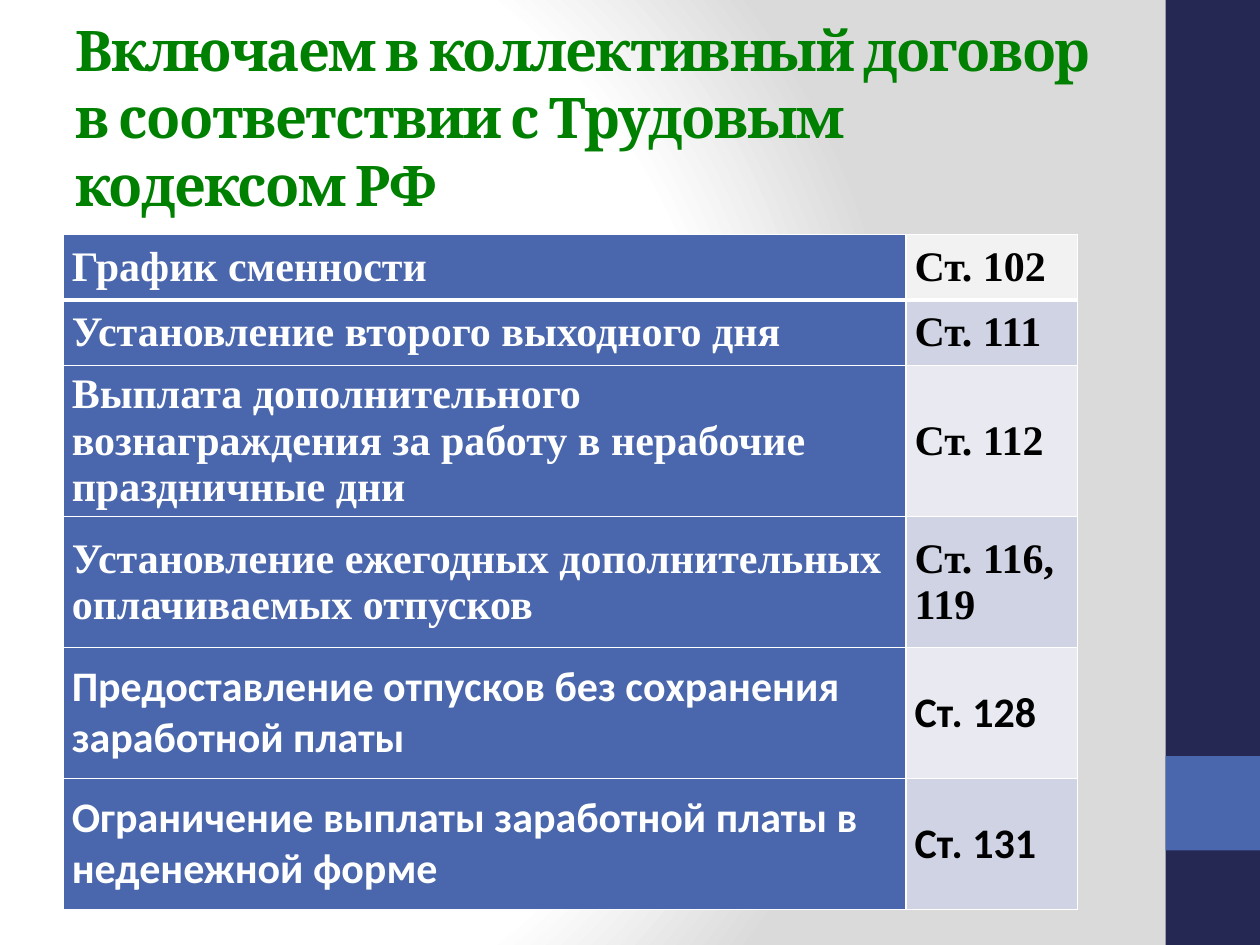
from dataclasses import dataclass

from lxml import etree
from pptx import Presentation
from pptx.dml.color import RGBColor
from pptx.enum import shapes, text
from pptx.oxml.ns import qn
from pptx.util import Cm, Pt

INCH = 2.54


@dataclass(frozen=True)
class Theme:
    navy: str = "242852"
    blue: str = "4A66AC"
    green: str = "008000"
    white: str = "FFFFFF"
    black: str = "000000"
    grey: str = "DADADA"
    pale: str = "F2F2F2"
    bands: tuple = ("E9EAF1", "D0D3E3")
    title_font: str = "Cambria"
    serif: str = "Times New Roman"
    sans: str = "Calibri"
    title_size: int = 32
    body_size: int = 24


def inches(*values):
    return [Cm(value * INCH) for value in values]


def apply(target, values):
    for name, value in values.items():
        setattr(target, name, value)


class Builder:
    def __init__(self, slide, theme):
        self.slide = slide
        self.theme = theme

    def background(self, stops, focus):
        """Circular gradient; focus holds the l, t, r, b insets in percent."""
        self.slide.background.fill.gradient()
        gradient = self.slide._element.find(".//" + qn("a:gradFill"))
        for child in list(gradient):
            gradient.remove(child)
        stop_list = etree.SubElement(gradient, qn("a:gsLst"))
        for position, color in stops:
            stop = etree.SubElement(stop_list, qn("a:gs"), pos=str(position * 1000))
            etree.SubElement(stop, qn("a:srgbClr"), val=color)
        circle = etree.SubElement(gradient, qn("a:path"), {"path": "circle"})
        insets = {side: str(value * 1000) for side, value in zip("ltrb", focus)}
        etree.SubElement(circle, qn("a:fillToRect"), insets)

    def paint(self, target, color):
        target.fill.solid()
        target.fill.fore_color.rgb = RGBColor.from_string(color)

    def rectangle(self, box, color):
        shape = self.slide.shapes.add_shape(
            shapes.MSO_SHAPE.RECTANGLE, *inches(*box))
        shape.shadow.inherit = False
        shape.line.fill.background()
        self.paint(shape, color)

    def bold_text(self, frame, words, font, size, color):
        frame.text = words
        style = {"name": font, "size": Pt(size), "bold": True}
        for paragraph in frame.paragraphs:
            for run in paragraph.runs:
                apply(run.font, style)
                run.font.color.rgb = RGBColor.from_string(color)

    def title(self, box, words):
        frame = self.slide.shapes.add_textbox(*inches(*box)).text_frame
        apply(frame, {"word_wrap": True,
                      "vertical_anchor": text.MSO_ANCHOR.MIDDLE})
        theme = self.theme
        self.bold_text(frame, words, theme.title_font, theme.title_size,
                       theme.green)
        for run in frame.paragraphs[0].runs:
            run._r.get_or_add_rPr().set("spc", "-100")

    def borders(self, cell, widths):
        """Borders go ahead of the fill in the cell properties."""
        properties = cell._tc.get_or_add_tcPr()
        for index, (side, width) in enumerate(widths.items()):
            line = etree.Element(qn("a:ln" + side), w=str(int(Pt(width))))
            solid = etree.SubElement(line, qn("a:solidFill"))
            etree.SubElement(solid, qn("a:srgbClr"), val=self.theme.white)
            properties.insert(index, line)

    def table(self, box, widths, heights, rows):
        theme = self.theme
        table = self.slide.shapes.add_table(
            len(rows), len(widths), *inches(*box)).table
        for column, width in zip(table.columns, inches(*widths)):
            column.width = width
        for row, height in zip(table.rows, inches(*heights)):
            row.height = height
        side_margin = Cm(0.07 * INCH)
        layout = {"margin_left": side_margin, "margin_right": side_margin,
                  "margin_top": 0, "margin_bottom": 0,
                  "vertical_anchor": text.MSO_ANCHOR.MIDDLE}
        for r, (topic, article, font) in enumerate(rows):
            article_fill = theme.bands[r % 2] if r else theme.pale
            columns = ((topic, theme.blue, theme.white),
                       (article, article_fill, theme.black))
            edges = {"L": 1, "R": 1, "T": 3 if r == 1 else 1,
                     "B": 3 if r == 0 else 1}
            for c, (words, fill, color) in enumerate(columns):
                cell = table.cell(r, c)
                apply(cell, layout)
                self.paint(cell, fill)
                self.borders(cell, edges)
                self.bold_text(cell.text_frame, words, font,
                               theme.body_size, color)


def main():
    theme = Theme()
    deck = Presentation()
    apply(deck, {"slide_width": Cm(10 * INCH), "slide_height": Cm(7.5 * INCH)})
    page = Builder(deck.slides.add_slide(deck.slide_layouts[6]), theme)

    page.background([(0, theme.white), (75, theme.white), (100, theme.grey)],
                    focus=(20, 50, 100, 50))
    page.rectangle((9.25, 0, 0.75, 7.5), theme.navy)
    page.rectangle((9.25, 6, 0.75, 0.75), theme.blue)
    page.title((0.5, 0.3, 8.33, 1.25),
               "Включаем в коллективный договор в соответствии "
               "с Трудовым кодексом РФ")

    articles = [
        ("График сменности", "Ст. 102", theme.serif),
        ("Установление второго выходного дня", "Ст. 111", theme.serif),
        ("Выплата дополнительного вознаграждения за работу в нерабочие "
         "праздничные дни", "Ст. 112", theme.serif),
        ("Установление ежегодных дополнительных оплачиваемых отпусков",
         "Ст. 116,\n119", theme.serif),
        ("Предоставление отпусков без сохранения заработной платы",
         "Ст. 128", theme.sans),
        ("Ограничение выплаты заработной платы в неденежной форме",
         "Ст. 131", theme.sans),
    ]
    page.table((0.5, 1.86, 8.04, 5.2), widths=(6.69, 1.36),
               heights=[0.52] * 2 + [1.04] * 4, rows=articles)
    deck.save("out.pptx")


if __name__ == "__main__":
    main()
